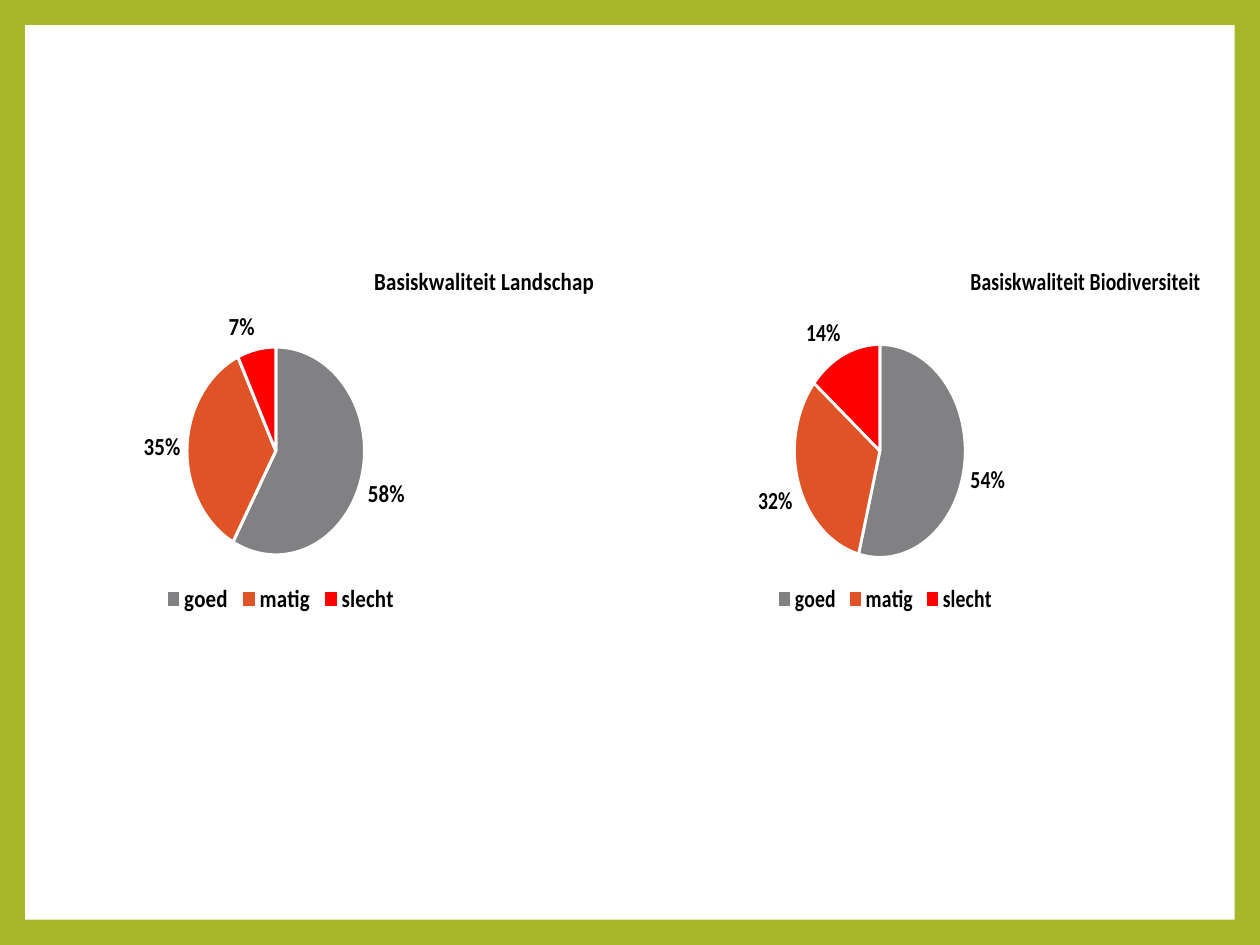
"""Build a slide with two pie charts of basic quality."""
from dataclasses import dataclass

from lxml.etree import SubElement
from pptx import Presentation
from pptx.chart.data import CategoryChartData
from pptx.dml.color import RGBColor
from pptx.enum.chart import XL_CHART_TYPE, XL_LABEL_POSITION, XL_LEGEND_POSITION
from pptx.enum.shapes import MSO_SHAPE
from pptx.oxml import parse_xml
from pptx.oxml.ns import nsdecls, qn
from pptx.util import Inches, Pt

CATEGORIES = ("goed", "matig", "slecht")
SLICE_COLORS = ("818183", "DF5327", "FF0000")
CHART_TOP, CHART_HEIGHT = 1.88, 3.06
PIE_MIDDLE = 3.58
LEGEND_WIDTH, LEGEND_HEIGHT = 2.25, 0.3


@dataclass(frozen=True)
class QualityPie:
    title: str
    values: tuple[int, ...]
    left: float
    width: float
    title_left: float
    pie_center: float
    diameter: float
    legend_left: float


PIES = (
    QualityPie("Basiskwaliteit Landschap", (58, 35, 7), 0.25, 4.5, 3.4, 2.52, 1.65, 1.44),
    QualityPie("Basiskwaliteit Biodiversiteit", (54, 32, 14), 5.25, 4.31, 8.27, 7.41, 1.69, 6.34),
)


def set_fill(fill, color: str) -> None:
    fill.solid()
    fill.fore_color.rgb = RGBColor.from_string(color)


def set_font(font, size: float, bold: bool) -> None:
    font.name = "Calibri"
    font.size = Pt(size)
    font.bold = bold
    font.color.rgb = RGBColor.from_string("000000")


def place(element, index: int, inner: bool = False, **fractions: float) -> None:
    """Give a chart part a manual layout in fractions of the chart."""
    for old_layout in element.findall(qn("c:layout")):
        element.remove(old_layout)
    layout = parse_xml(f"<c:layout {nsdecls('c')}><c:manualLayout/></c:layout>")
    if inner:
        SubElement(layout[0], qn("c:layoutTarget"), val="inner")
    for axis in ("x", "y"):
        SubElement(layout[0], qn(f"c:{axis}Mode"), val="edge")
    for name, value in fractions.items():
        SubElement(layout[0], qn(f"c:{name}"), val=f"{value:.4f}")
    element.insert(index, layout)


def add_pie(slide, pie: QualityPie) -> None:
    data = CategoryChartData()
    data.categories = CATEGORIES
    data.add_series("Series 1", pie.values)
    chart = slide.shapes.add_chart(
        XL_CHART_TYPE.PIE, Inches(pie.left), Inches(CHART_TOP),
        Inches(pie.width), Inches(CHART_HEIGHT), data).chart
    set_font(chart.font, 10, False)

    chart.has_title = True
    title_frame = chart.chart_title.text_frame
    title_frame.text = pie.title
    set_font(title_frame.paragraphs[0].font, 14, True)

    chart.has_legend = True
    chart.legend.position = XL_LEGEND_POSITION.BOTTOM
    chart.legend.include_in_layout = False
    set_font(chart.legend.font, 14, True)

    plot = chart.plots[0]
    plot.vary_by_categories = True
    for index, color in enumerate(SLICE_COLORS):
        slice_format = plot.series[0].points[index].format
        set_fill(slice_format.fill, color)
        set_fill(slice_format.line.fill, "FFFFFF")
        slice_format.line.width = Pt(2)

    plot.has_data_labels = True
    labels = plot.data_labels
    labels.show_percentage = True
    labels.show_value = False
    labels.number_format = "0%"
    labels.number_format_is_linked = False
    labels.position = XL_LABEL_POSITION.OUTSIDE_END
    set_font(labels.font, 14, True)

    def across(position: float) -> float:
        return (position - pie.left) / pie.width

    def down(position: float) -> float:
        return (position - CHART_TOP) / CHART_HEIGHT

    radius = pie.diameter / 2
    parts = chart.element.find(qn("c:chart"))
    place(parts.find(qn("c:title")), 1, x=across(pie.title_left), y=down(2.06))
    place(parts.find(qn("c:plotArea")), 0, inner=True,
          x=across(pie.pie_center - radius), y=down(PIE_MIDDLE - radius),
          w=pie.diameter / pie.width, h=pie.diameter / CHART_HEIGHT)
    place(parts.find(qn("c:legend")), 1, x=across(pie.legend_left), y=down(4.65),
          w=LEGEND_WIDTH / pie.width, h=LEGEND_HEIGHT / CHART_HEIGHT)


def main() -> None:
    presentation = Presentation()
    presentation.slide_width = Inches(10)
    presentation.slide_height = Inches(7.5)
    slide = presentation.slides.add_slide(presentation.slide_layouts[6])
    set_fill(slide.background.fill, "A6B727")
    panel = slide.shapes.add_shape(
        MSO_SHAPE.RECTANGLE, Inches(0.2), Inches(0.2), Inches(9.6), Inches(7.1))
    panel.shadow.inherit = False
    set_fill(panel.fill, "FFFFFF")
    panel.line.fill.background()
    for pie in PIES:
        add_pie(slide, pie)
    presentation.save("out.pptx")


if __name__ == "__main__":
    main()
